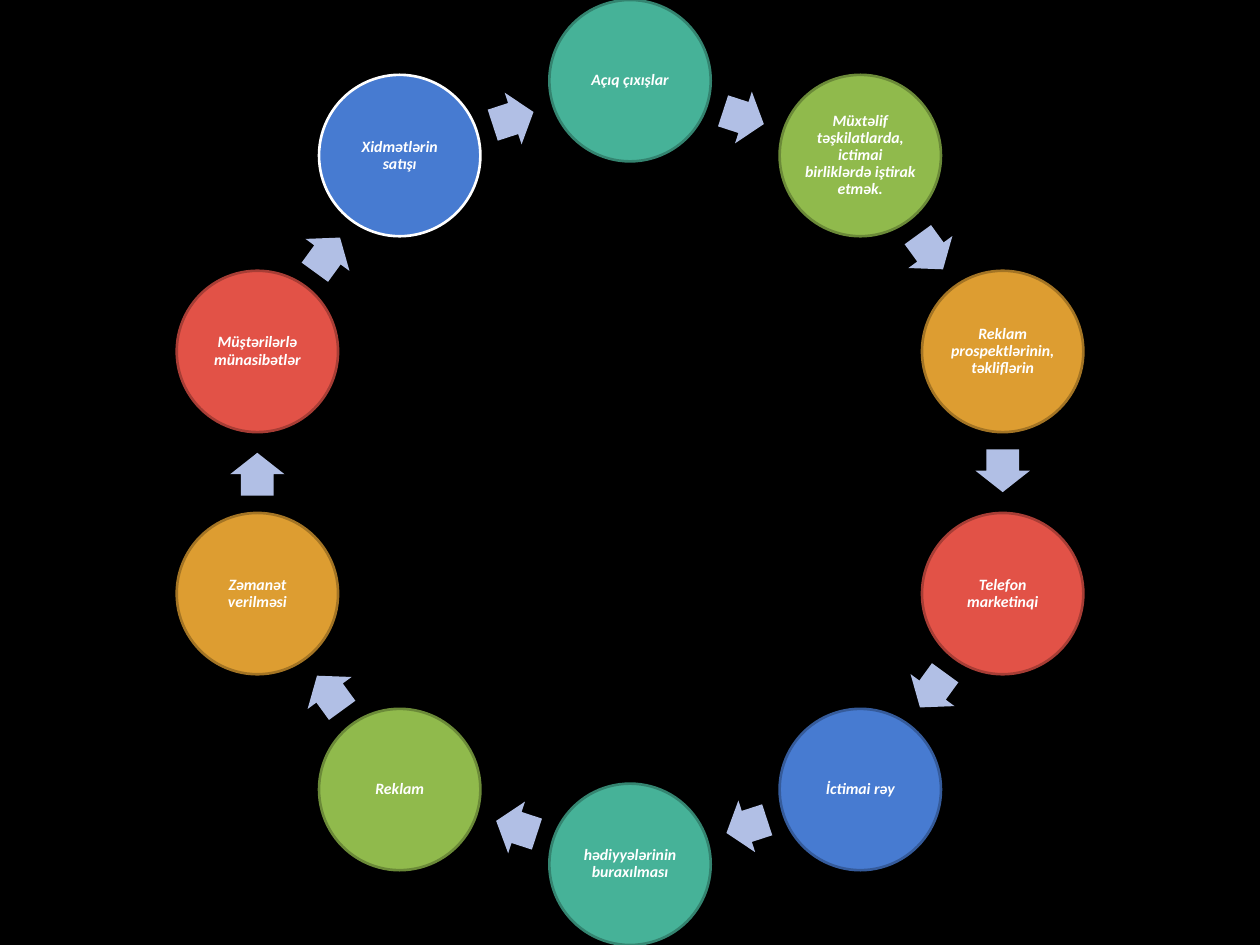
from math import sin, cos, radians
from pptx import Presentation
from pptx.util import Pt
from pptx.dml.color import RGBColor as RGB
from pptx.enum.shapes import MSO_SHAPE as Kind
from pptx.enum.text import PP_ALIGN as Align, MSO_ANCHOR as Anchor

COLORS = {
    "back": "000000", "text": "FFFFFF", "arrow": "B1BFE5",
    "teal": "46B298", "teal edge": "348470",
    "green": "90BA4C", "green edge": "6B8A38",
    "gold": "DD9D31", "gold edge": "A37424",
    "red": "E25247", "red edge": "A73D35",
    "blue": "477BD1", "blue edge": "355B9B",
}
HUES = ["teal", "green", "gold", "red", "blue"]
STEPS = [
    "Açıq çıxışlar",
    "Müxtəlif təşkilatlarda, ictimai birliklərdə iştirak etmək.",
    "Reklam prospektlərinin, təkliflərin",
    "Telefon marketinqi",
    "İctimai rəy",
    "hədiyyələrinin buraxılması",
    "Reklam",
    "Zəmanət verilməsi",
    "Müştərilərlə münasibətlər",
    "Xidmətlərin satışı",
]

# Ring geometry in points
MID_X, MID_Y, RING = 360, 270, 223.9
DISC = 92.2
ARROW_W, ARROW_H, SHIFT = 24.5, 31.1, -1
TURN = 360 / len(STEPS)


def color(name):
    return RGB.from_string(COLORS[name])


def add_shape(slide, kind, x, y, w, h, fill):
    """Add a flat shape centred on x, y."""
    shape = slide.shapes.add_shape(
        kind, Pt(x - w / 2), Pt(y - h / 2), Pt(w), Pt(h))
    shape.shadow.inherit = False
    shape.fill.solid()
    shape.fill.fore_color.rgb = color(fill)
    return shape


def put_text(shape, text, size=9, bold=True, italic=True, hue="text"):
    frame = shape.text_frame
    frame.word_wrap = True
    frame.vertical_anchor = Anchor.MIDDLE
    frame.margin_left = frame.margin_right = Pt(0.9)
    frame.margin_top = frame.margin_bottom = Pt(0.9)
    para = frame.paragraphs[0]
    para.alignment = Align.CENTER
    para.line_spacing = 0.9
    run = para.add_run()
    run.text = text
    font = run.font
    font.name, font.size = "Calibri", Pt(size)
    font.bold, font.italic = bold, italic
    font.color.rgb = color(hue)


def add_disc(slide, text, angle, hue, edge):
    a = radians(angle)
    disc = add_shape(slide, Kind.OVAL, MID_X + RING * sin(a),
                     MID_Y - RING * cos(a), DISC, DISC, hue)
    disc.line.color.rgb = color(edge)
    disc.line.width = Pt(1.5)
    put_text(disc, text)


def add_arrow(slide, angle):
    # Middle of the chord between two discs, moved slightly along it
    a = radians(angle)
    reach = RING * cos(radians(TURN / 2))
    x = MID_X + reach * sin(a) + SHIFT * cos(a)
    y = MID_Y - reach * cos(a) + SHIFT * sin(a)
    arrow = add_shape(slide, Kind.RIGHT_ARROW, x, y,
                      ARROW_W, ARROW_H, "arrow")
    arrow.adjustments[0] = 0.6
    arrow.adjustments[1] = 0.5
    arrow.line.fill.background()
    arrow.rotation = angle


def main():
    deck = Presentation()
    deck.slide_width, deck.slide_height = Pt(720), Pt(540)
    slide = deck.slides.add_slide(deck.slide_layouts[6])
    back = slide.background.fill
    back.solid()
    back.fore_color.rgb = color("back")

    # Cycle of discs and arrows, clockwise from the top
    for i, text in enumerate(STEPS):
        hue = HUES[i % len(HUES)]
        last = i == len(STEPS) - 1
        add_disc(slide, text, i * TURN, hue,
                 "text" if last else f"{hue} edge")
        add_arrow(slide, (i + 0.5) * TURN)

    deck.save("out.pptx")


if __name__ == "__main__":
    main()
